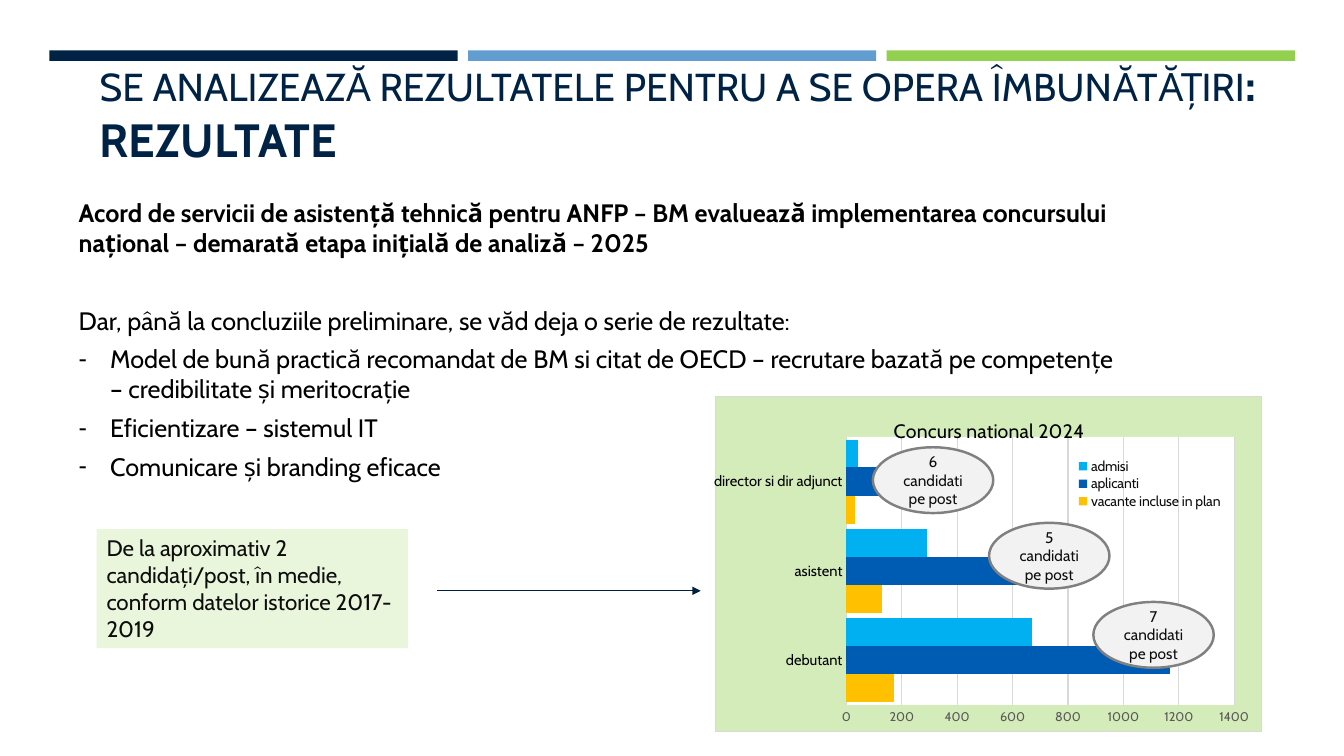
"""Build the slide on the results of the national competition."""
from lxml.etree import SubElement
from pptx import Presentation
from pptx.chart.data import CategoryChartData
from pptx.dml.color import RGBColor
from pptx.enum.chart import XL_CHART_TYPE, XL_LEGEND_POSITION, XL_TICK_MARK
from pptx.enum.shapes import MSO_CONNECTOR, MSO_SHAPE
from pptx.enum.text import MSO_ANCHOR, MSO_AUTO_SIZE, PP_ALIGN
from pptx.oxml import parse_xml
from pptx.oxml.ns import qn
from pptx.util import Pt

FONT = "Cabin"
NAVY, BLACK, INK, RULE = "002345", "000000", "0D0D0D", "D9D9D9"
CHART_NS = "http://schemas.openxmlformats.org/drawingml/2006/chart"
DRAW_NS = "http://schemas.openxmlformats.org/drawingml/2006/main"

HEADING = "SE ANALIZEAZĂ REZULTATELE PENTRU A SE OPERA ÎMBUNĂTĂȚIRI"
HEADING_END = ": REZULTATE"
BAND_COLORS = [NAVY, "629DD1", "92D050"]
AGREEMENT = ("Acord de servicii de asistență tehnică pentru ANFP – BM evaluează implementarea "
             "concursului național – demarată etapa inițială de analiză – 2025")
LEAD_IN = "Dar, până la concluziile preliminare, se văd deja o serie de rezultate:"
RESULTS = [
    "Model de bună practică recomandat de BM si citat de OECD – recrutare bazată pe "
    "competențe – credibilitate și meritocrație",
    "Eficientizare – sistemul IT",
    "Comunicare și branding eficace",
]
HISTORY = "De la aproximativ 2 candidați/post, în medie, conform datelor istorice 2017-2019"
CHART_TITLE = "Concurs national 2024"
POSTS = ["debutant", "asistent", "director si dir adjunct"]
SERIES = [
    ("vacante incluse in plan", [170, 130, 30], "FFC000"),
    ("aplicanti", [1170, 630, 150], "005BB3"),
    ("admisi", [670, 290, 40], "00B0F0"),
]
RATIOS = [("7 candidati pe post", 781, 430), ("5 candidati pe post", 706.5, 373.5),
          ("6 candidati pe post", 623.5, 319.5)]


def color(value):
    return RGBColor.from_string(value)


def set_font(font, size, fill, bold=False):
    font.name, font.size, font.bold = FONT, Pt(size), bold
    font.color.rgb = color(fill)


def write(paragraph, text, size=18, fill=BLACK, bold=False, before=6, after=0,
          align=PP_ALIGN.LEFT, bullet=None):
    run = paragraph.add_run()
    run.text = text
    set_font(run.font, size, fill, bold)
    paragraph.alignment = align
    paragraph.line_spacing = 1.0
    paragraph.space_before, paragraph.space_after = Pt(before), Pt(after)
    props = paragraph._p.get_or_add_pPr()
    indent = Pt(22.5) if bullet else 0
    props.set("marL", str(indent))
    props.set("indent", str(-indent))
    if bullet:
        SubElement(props, qn("a:buChar")).set("char", bullet)
    else:
        SubElement(props, qn("a:buNone"))


def place(shape, left, top, width, height):
    shape.left, shape.top, shape.width, shape.height = map(Pt, (left, top, width, height))


def add_block(slide, kind, box, fill, line=None):
    block = slide.shapes.add_shape(kind, *map(Pt, box))
    block.shadow.inherit = False
    block.fill.solid()
    block.fill.fore_color.rgb = color(fill)
    if line:
        block.line.color.rgb = color(line)
        block.line.width = Pt(1.75)
    else:
        block.line.fill.background()
    block.text_frame.word_wrap = True
    return block


def add_heading(slide):
    heading = slide.shapes.title
    place(heading, 64, 42.5, 893, 80)
    frame = heading.text_frame
    frame.auto_size = MSO_AUTO_SIZE.NONE
    frame.vertical_anchor = MSO_ANCHOR.BOTTOM
    write(frame.paragraphs[0], HEADING, size=27.8, fill=NAVY, before=0, after=6)
    ending = frame.paragraphs[0].add_run()
    ending.text = HEADING_END
    set_font(ending.font, 33.3, NAVY, bold=True)


def add_body(slide):
    body = slide.placeholders[1]
    place(body, 49, 137, 766, 240)
    frame = body.text_frame
    frame.auto_size = MSO_AUTO_SIZE.NONE
    frame.vertical_anchor = MSO_ANCHOR.TOP
    write(frame.paragraphs[0], AGREEMENT, bold=True)
    write(frame.add_paragraph(), LEAD_IN, before=34)
    for result in RESULTS:
        write(frame.add_paragraph(), result, bullet="-")


def set_layout(part, index, inner=False, **fractions):
    for old in part.findall(qn("c:layout")):
        part.remove(old)
    target = '<c:layoutTarget val="inner"/>' if inner else ""
    modes = "".join(f'<c:{axis}Mode val="edge"/>' for axis in "xy")
    sizes = "".join(f'<c:{key} val="{value}"/>' for key, value in fractions.items())
    part.insert(index, parse_xml(
        f'<c:layout xmlns:c="{CHART_NS}"><c:manualLayout>{target}{modes}{sizes}'
        "</c:manualLayout></c:layout>"))


def area_format(fill, line=None):
    stroke = f'<a:solidFill><a:srgbClr val="{line}"/></a:solidFill>' if line else "<a:noFill/>"
    return parse_xml(
        f'<c:spPr xmlns:c="{CHART_NS}" xmlns:a="{DRAW_NS}"><a:solidFill><a:srgbClr val="{fill}"/>'
        f'</a:solidFill><a:ln w="{Pt(0.75)}">{stroke}</a:ln></c:spPr>')


def add_results_chart(slide):
    data = CategoryChartData()
    data.categories = POSTS
    for name, values, _ in SERIES:
        data.add_series(name, values)
    chart = slide.shapes.add_chart(XL_CHART_TYPE.BAR_CLUSTERED, Pt(510), Pt(283), Pt(391.5),
                                   Pt(240), data).chart
    set_font(chart.font, 10, BLACK)
    bars = chart.plots[0]
    bars.gap_width, bars.overlap, bars.vary_by_categories = 19, 0, False
    for series, (_, _, fill) in zip(bars.series, SERIES):
        series.format.fill.solid()
        series.format.fill.fore_color.rgb = color(fill)

    posts, counts = chart.category_axis, chart.value_axis
    for axis, size, fill in ((posts, 10.5, BLACK), (counts, 9, "595959")):
        axis.major_tick_mark = axis.minor_tick_mark = XL_TICK_MARK.NONE
        set_font(axis.tick_labels.font, size, fill)
    counts.minimum_scale, counts.maximum_scale, counts.major_unit = 0, 1400, 200
    counts.format.line.fill.background()
    for rule in (posts.format.line, counts.major_gridlines.format.line):
        rule.color.rgb = color(RULE)
        rule.width = Pt(0.75)

    write(chart.chart_title.text_frame.paragraphs[0], CHART_TITLE, size=14, before=0,
          align=PP_ALIGN.CENTER)
    chart.has_legend = True
    chart.legend.position = XL_LEGEND_POSITION.BOTTOM
    chart.legend.include_in_layout = True
    set_font(chart.legend.font, 10, INK)

    root = chart._chartSpace.chart
    plot_area = root.plotArea
    set_layout(root.find(qn("c:title")), 1, x=0.32, y=0.05)
    set_layout(plot_area, 0, inner=True, x=0.24, y=0.12, w=0.71, h=0.8)
    set_layout(root.find(qn("c:legend")), 1, x=0.65, y=0.18, w=0.29, h=0.16)
    plot_area.append(area_format("FFFFFF"))
    root.addnext(area_format("D3ECB9", RULE))


def add_arrow(slide):
    arrow = slide.shapes.add_connector(MSO_CONNECTOR.STRAIGHT, Pt(312.5), Pt(422), Pt(500.5),
                                       Pt(422))
    arrow.line.color.rgb = color("00203E")
    arrow.line.width = Pt(1)
    SubElement(arrow.line._get_or_add_ln(), qn("a:tailEnd")).set("type", "triangle")
    SubElement(arrow._element.spPr, qn("a:effectLst"))


def main():
    deck = Presentation()
    deck.slide_width, deck.slide_height = Pt(960), Pt(540)
    slide = deck.slides.add_slide(deck.slide_layouts[1])
    for position, fill in enumerate(BAND_COLORS):
        add_block(slide, MSO_SHAPE.RECTANGLE, (35.3 + 299 * position, 36, 291.6, 7.5), fill)
    add_heading(slide)
    add_results_chart(slide)
    add_body(slide)
    history = add_block(slide, MSO_SHAPE.RECTANGLE, (69, 378, 222.5, 85), "E9F6DC")
    history.text_frame.vertical_anchor = MSO_ANCHOR.TOP
    write(history.text_frame.paragraphs[0], HISTORY, size=16, fill=INK)
    add_arrow(slide)
    for ratio, left, top in RATIOS:
        bubble = add_block(slide, MSO_SHAPE.OVAL, (left, top, 86, 47), "F2F2F2", "808080")
        bubble.text_frame.vertical_anchor = MSO_ANCHOR.MIDDLE
        write(bubble.text_frame.paragraphs[0], ratio, size=11, fill=INK, before=0,
              align=PP_ALIGN.CENTER)
    deck.save("out.pptx")


if __name__ == "__main__":
    main()
